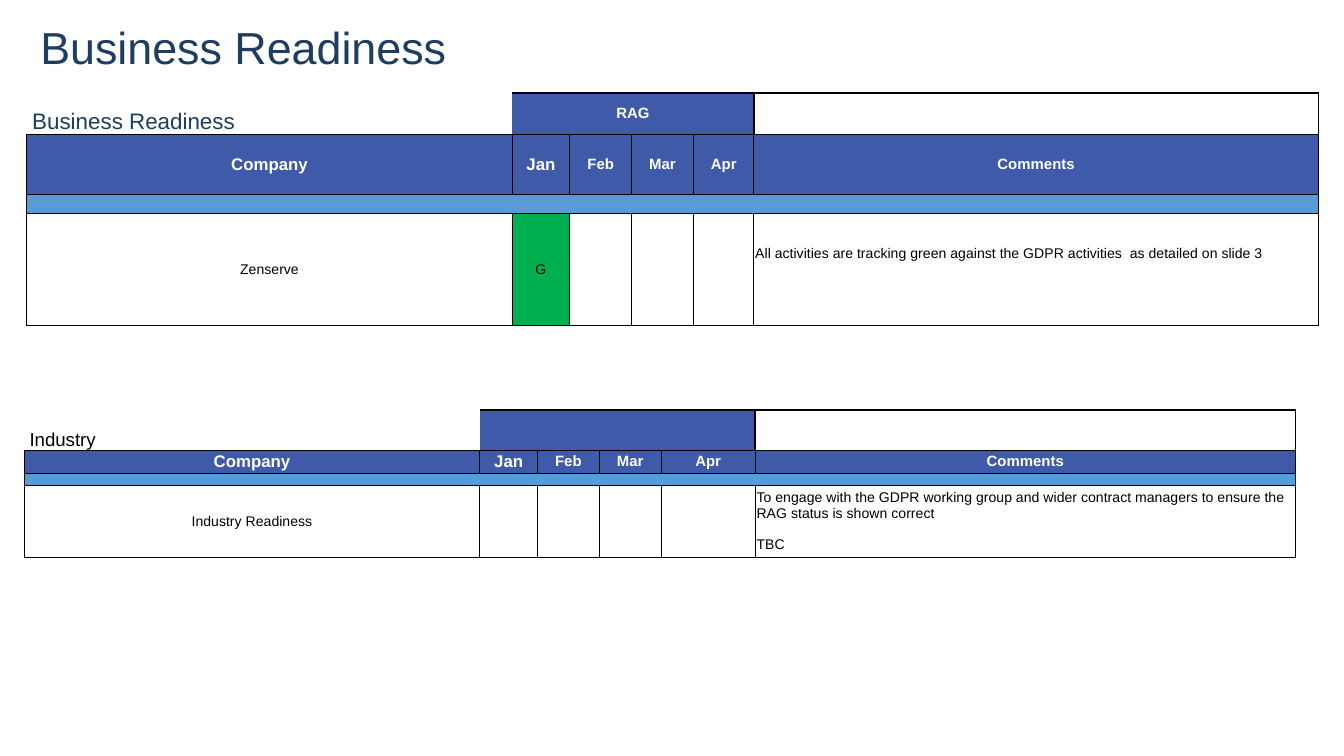
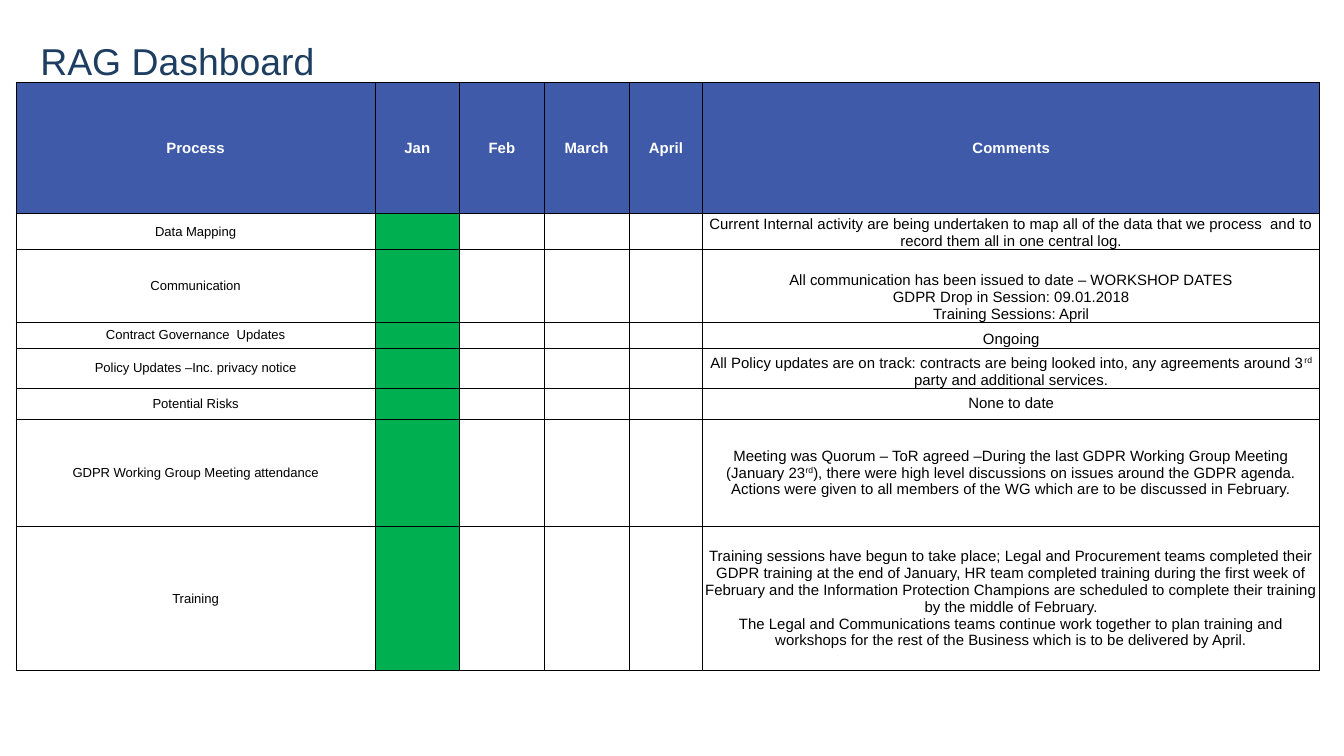
from dataclasses import dataclass, replace

from lxml import etree
from pptx import Presentation
from pptx.dml.color import RGBColor
from pptx.enum import text
from pptx.oxml import ns
from pptx.util import Inches, Pt


@dataclass(frozen=True)
class Theme:
    font: str = "Arial"
    navy: str = "1D3E61"
    header: str = "3E5AA8"
    band: str = "5B9BD5"
    green: str = "00B050"
    white: str = "FFFFFF"
    black: str = "000000"
    title_size: float = 24
    dashboard_title_size: float = 20
    section_size: float = 12
    industry_size: float = 10
    column_size: float = 9
    text_size: float = 8
    readiness_size: float = 7.5
    process_size: float = 7
    thin: float = 0.5
    thick: float = 1


THEME = Theme()
CENTER, LEFT = text.PP_ALIGN.CENTER, text.PP_ALIGN.LEFT
MIDDLE, BOTTOM = text.MSO_ANCHOR.MIDDLE, text.MSO_ANCHOR.BOTTOM


@dataclass(frozen=True)
class CellStyle:
    size: float = THEME.text_size
    color: str = THEME.black
    bold: bool = False
    fill: str = THEME.white
    align: int = CENTER
    anchor: int = MIDDLE
    left: float = 0.01
    bottom: float = 0
    gap: float = 0
    borders: tuple = (THEME.thin,) * 4  # left, right, top, bottom


HEADER = CellStyle(color=THEME.white, bold=True, fill=THEME.header)
COLUMN = replace(HEADER, size=THEME.column_size)
BAND = CellStyle(size=1, fill=THEME.band)
READINESS = CellStyle(size=THEME.readiness_size)
COMMENT = replace(READINESS, align=LEFT)
PROCESS = CellStyle(size=THEME.process_size)
STATUS = CellStyle(size=THEME.process_size, fill=THEME.green)
SECTION = CellStyle(align=LEFT, anchor=BOTTOM, left=0.04,
                    borders=(0, 0, 0, THEME.thin))
RAG_HEAD = replace(HEADER, borders=(0, THEME.thick, THEME.thick, THEME.thin))
COMMENT_HEAD = CellStyle(borders=(THEME.thick,) * 3 + (THEME.thin,))


def set_borders(cell, widths):
    properties = cell._tc.get_or_add_tcPr()
    for index, (side, width) in enumerate(zip("LRTB", widths)):
        line = etree.Element(ns.qn(f"a:ln{side}"), w=str(Pt(width)))
        if width:
            fill = etree.SubElement(line, ns.qn("a:solidFill"))
            etree.SubElement(fill, ns.qn("a:srgbClr"), val=THEME.black)
        else:
            etree.SubElement(line, ns.qn("a:noFill"))
        properties.insert(index, line)


def write_span(para, words, size, color, bold=False):
    span = para.add_run()
    span.text = words
    span.font.name = THEME.font
    span.font.size = Pt(size)
    span.font.bold = bold
    span.font.color.rgb = RGBColor.from_string(color)
    return span


def fill_cell(cell, words, style):
    """Format a cell; lines are paragraphs and ^marks^ enclose superscripts."""
    cell.fill.solid()
    cell.fill.fore_color.rgb = RGBColor.from_string(style.fill)
    cell.margin_left, cell.margin_right = Inches(style.left), Inches(0.01)
    cell.margin_top, cell.margin_bottom = 0, Inches(style.bottom)
    cell.vertical_anchor = style.anchor
    set_borders(cell, style.borders)
    frame = cell.text_frame
    for number, line in enumerate(words.split("\n")):
        para = frame.add_paragraph() if number else frame.paragraphs[0]
        para.alignment = style.align
        if number and style.gap:
            para.space_before = Pt(style.gap)
        for index, part in enumerate(line.split("^")):
            if part:
                span = write_span(para, part, style.size, style.color, style.bold)
                if index % 2:
                    span.font._element.set("baseline", "30000")
        if not line:
            etree.SubElement(para._p, ns.qn("a:endParaRPr"),
                             sz=str(int(style.size * 100)))


def add_grid(page, box, columns, rows, cells):
    """Place a table of (words, style) cells in the box (left, top)."""
    table = page.shapes.add_table(
        len(rows), len(columns), Inches(box[0]), Inches(box[1]),
        Inches(sum(columns)), Inches(sum(rows))).table
    table.first_row = table.horz_banding = False
    for column, width in zip(table.columns, columns):
        column.width = Inches(width)
    for row, height, contents in zip(table.rows, rows, cells):
        row.height = Inches(height)
        for cell, (words, style) in zip(row.cells, contents):
            fill_cell(cell, words, style)
    return table


def add_title(page, box, words, size):
    title = page.shapes.title
    title.left, title.top, title.width, title.height = map(Inches, box)
    frame = title.text_frame
    frame.word_wrap = True
    frame.auto_size = text.MSO_AUTO_SIZE.NONE
    frame.vertical_anchor = MIDDLE
    para = frame.paragraphs[0]
    para.alignment = LEFT
    write_span(para, words, size, THEME.navy)


def add_readiness_table(page, box, columns, rows, section, rag, company,
                        status, comment):
    """Each of section, company, status and comment is (words, style)."""
    names = [("Company", COLUMN), ("Jan", COLUMN)]
    names += [(name, HEADER) for name in ("Feb", "Mar", "Apr", "Comments")]
    cells = [
        [section, (rag, RAG_HEAD)] + [("", RAG_HEAD)] * 3 + [("", COMMENT_HEAD)],
        names,
        [("", BAND)] * 6,
        [company, status] + [("", READINESS)] * 3 + [comment],
    ]
    table = add_grid(page, box, columns, rows, cells)
    table.cell(0, 1).merge(table.cell(0, 4))
    table.cell(2, 0).merge(table.cell(2, 5))


def build_readiness(page):
    add_title(page, (0.2, 0.1, 9.06, 0.5), "Business Readiness", THEME.title_size)
    add_readiness_table(
        page, (0.2, 0.69), (3.61, 0.43, 0.46, 0.46, 0.45, 4.2),
        (0.31, 0.45, 0.14, 0.83),
        ("Business Readiness",
         replace(SECTION, size=THEME.section_size, color=THEME.navy)), "RAG",
        ("Zenserve", READINESS), ("G", replace(READINESS, fill=THEME.green)),
        ("All activities are tracking green against the GDPR activities  as "
         "detailed on slide 3", replace(COMMENT, bottom=0.24)))
    add_readiness_table(
        page, (0.18, 3.05), (3.39, 0.43, 0.46, 0.46, 0.7, 4.02),
        (0.3, 0.17, 0.09, 0.54),
        ("Industry", replace(SECTION, size=THEME.industry_size)), "",
        ("Industry Readiness", READINESS), ("", READINESS),
        ("To engage with the GDPR working group and wider contract managers to "
         "ensure the RAG status is shown correct\nTBC", replace(COMMENT, gap=8.6)))


# process, row height, comment anchor, comment
PROCESSES = [
    ("Data Mapping", 0.27, BOTTOM,
     "Current Internal activity are being undertaken to map all of the data that "
     "we process  and to record them all in one central log."),
    ("Communication", 0.54, BOTTOM,
     "All communication has been issued to date – WORKSHOP DATES\n"
     "GDPR Drop in Session: 09.01.2018\nTraining Sessions: April"),
    ("Contract Governance  Updates", 0.19, BOTTOM, "Ongoing"),
    ("Policy Updates –Inc. privacy notice", 0.3, BOTTOM,
     "All Policy updates are on track: contracts are being looked into, any "
     "agreements around 3^rd^ party and additional services."),
    ("Potential Risks", 0.23, MIDDLE, "None to date"),
    ("GDPR Working Group Meeting attendance", 0.8, MIDDLE,
     "Meeting was Quorum – ToR agreed –During the last GDPR Working Group Meeting "
     "(January 23^rd^), there were high level discussions on issues around the "
     "GDPR agenda.\nActions were given to all members of the WG which are to be "
     "discussed in February."),
    ("Training", 1.07, MIDDLE,
     "Training sessions have begun to take place; Legal and Procurement teams "
     "completed their GDPR training at the end of January, HR team completed "
     "training during the first week of February and the Information Protection "
     "Champions are scheduled to complete their training by the middle of "
     "February.\nThe Legal and Communications teams continue work together to plan "
     "training and workshops for the rest of the Business which is to be "
     "delivered by April."),
]


def build_dashboard(page):
    add_title(page, (0.2, 0.23, 9.21, 0.44), "RAG Dashboard",
              THEME.dashboard_title_size)
    names = ("Process", "Jan", "Feb", "March", "April", "Comments")
    rows, cells = [0.98], [[(name, HEADER) for name in names]]
    for process, height, anchor, comment in PROCESSES:
        rows.append(height)
        cells.append([(process, PROCESS), ("", STATUS)] + [("", PROCESS)] * 3
                     + [(comment, CellStyle(anchor=anchor))])
    add_grid(page, (0.12, 0.61), (2.67, 0.63, 0.63, 0.63, 0.55, 4.59), rows, cells)


def main():
    deck = Presentation()
    deck.slide_width = Inches(10)
    deck.slide_height = deck.slide_width * 9 // 16
    title_only = deck.slide_layouts[5]
    for build in (build_readiness, build_dashboard):
        build(deck.slides.add_slide(title_only))
    deck.save("out.pptx")


if __name__ == "__main__":
    main()
